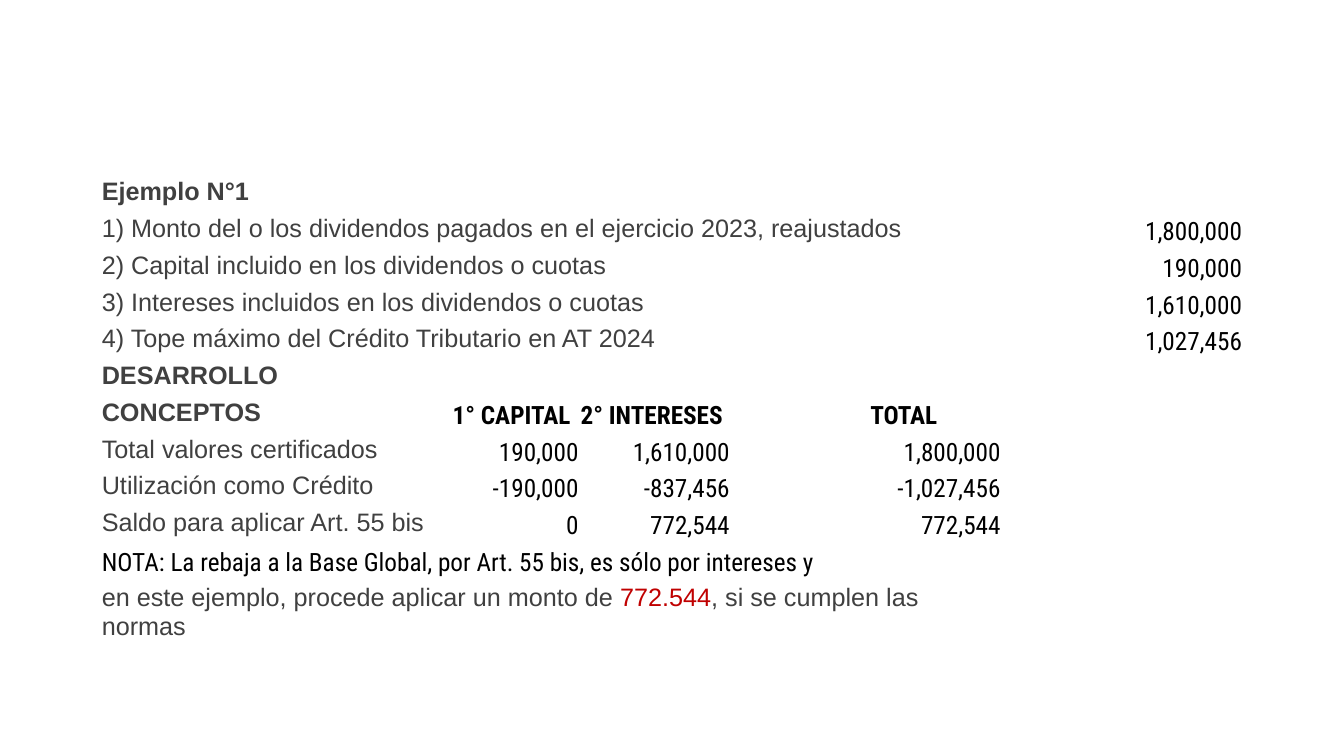
from dataclasses import dataclass
from pptx import Presentation
from pptx.dml.color import RGBColor
from pptx.enum.text import MSO_ANCHOR, PP_ALIGN
from pptx.util import Pt

SCALE = 9525  # EMU per px, 96 px to the inch


@dataclass(frozen=True)
class Theme:
    label: str = "Arial"
    value: str = "Roboto Condensed"
    grey: str = "404040"
    black: str = "000000"
    red: str = "C00000"
    size: int = 18
    pad: int = 1


class Deck:
    def __init__(self, theme, wide, high):
        self.theme = theme
        self.prs = Presentation()
        self.prs.slide_width = wide * SCALE
        self.prs.slide_height = high * SCALE
        self.slide = self.prs.slides.add_slide(self.prs.slide_layouts[6])

    def grid(self, left, top, cols, rows):
        box = [n * SCALE for n in (left, top, sum(cols), sum(rows))]
        table = self.slide.shapes.add_table(len(rows), len(cols), *box).table
        table.first_row = table.horz_banding = False
        for col, wide in zip(table.columns, cols):
            col.width = wide * SCALE
        for row, high in zip(table.rows, rows):
            row.height = high * SCALE
        pad = self.theme.pad * SCALE
        for cell in table.iter_cells():
            cell.fill.background()
            cell.margin_left = cell.margin_right = cell.margin_top = pad
            cell.margin_bottom = 0
        return table

    def text(self, cell, parts, font, color, bold=False):
        for words, tint in parts:
            run = cell.text_frame.paragraphs[0].add_run()
            run.text = words
            run.font.name = font
            run.font.size = Pt(self.theme.size)
            run.font.bold = bold
            run.font.color.rgb = RGBColor.from_string(tint or color)

    def label(self, cell, *parts, bold=False):
        cell.vertical_anchor = MSO_ANCHOR.MIDDLE
        self.text(cell, parts, self.theme.label, self.theme.grey, bold)

    def value(self, cell, words, bold=False, right=True, indent=0):
        cell.vertical_anchor = MSO_ANCHOR.BOTTOM
        cell.margin_left = (self.theme.pad + indent) * SCALE
        if right:
            cell.text_frame.paragraphs[0].alignment = PP_ALIGN.RIGHT
        self.text(cell, [(words, None)], self.theme.value, self.theme.black, bold)


# Wording and figures
HEADS = {0: "Ejemplo N°1", 5: "DESARROLLO", 6: "CONCEPTOS"}
FACTS = [
    ("1) Monto del o los dividendos pagados en el ejercicio 2023, reajustados", 1800000, 4),
    ("2) Capital incluido en los dividendos o cuotas", 190000, 3),
    ("3) Intereses incluidos en los dividendos o cuotas", 1610000, 3),
    ("4) Tope máximo del Crédito Tributario en AT 2024", 1027456, 3),
]
TITLES = [("1° CAPITAL", 0), ("2° INTERESES", 0), ("TOTAL", 132)]
STEPS = [
    ("Total valores certificados", 190000, 1610000, 1800000),
    ("Utilización como Crédito", -190000, -837456, -1027456),
    ("Saldo para aplicar Art. 55 bis", 0, 772544, 772544),
]
NOTE = "NOTA: La rebaja a la Base Global, por Art. 55 bis, es sólo por intereses y"


def main():
    theme = Theme()
    deck = Deck(theme, 1280, 720)
    table = deck.grid(96, 165, [334, 122, 144, 258, 124, 106], [35] * 11 + [65])

    # Section heads
    for row, words in HEADS.items():
        deck.label(table.cell(row, 0), (words, None), bold=True)

    # Facts of the example
    for row, (words, amount, span) in enumerate(FACTS, 1):
        table.cell(row, 0).merge(table.cell(row, span - 1))
        deck.label(table.cell(row, 0), (words, None))
        deck.value(table.cell(row, 5), f"{amount:,}")

    # Worked figures
    for col, (words, indent) in enumerate(TITLES, 1):
        deck.value(table.cell(6, col), words, bold=True, right=False, indent=indent)
    for row, (words, *sums) in enumerate(STEPS, 7):
        deck.label(table.cell(row, 0), (words, None))
        for col, amount in enumerate(sums, 1):
            deck.value(table.cell(row, col), f"{amount:,}")

    # Closing note
    for row in (10, 11):
        table.cell(row, 0).merge(table.cell(row, 3))
    deck.value(table.cell(10, 0), NOTE, right=False)
    deck.label(
        table.cell(11, 0),
        ("en este ejemplo, procede aplicar un monto de ", None),
        ("772.544", theme.red),
        (", si se cumplen las normas", None),
    )

    deck.prs.save("out.pptx")


if __name__ == "__main__":
    main()
